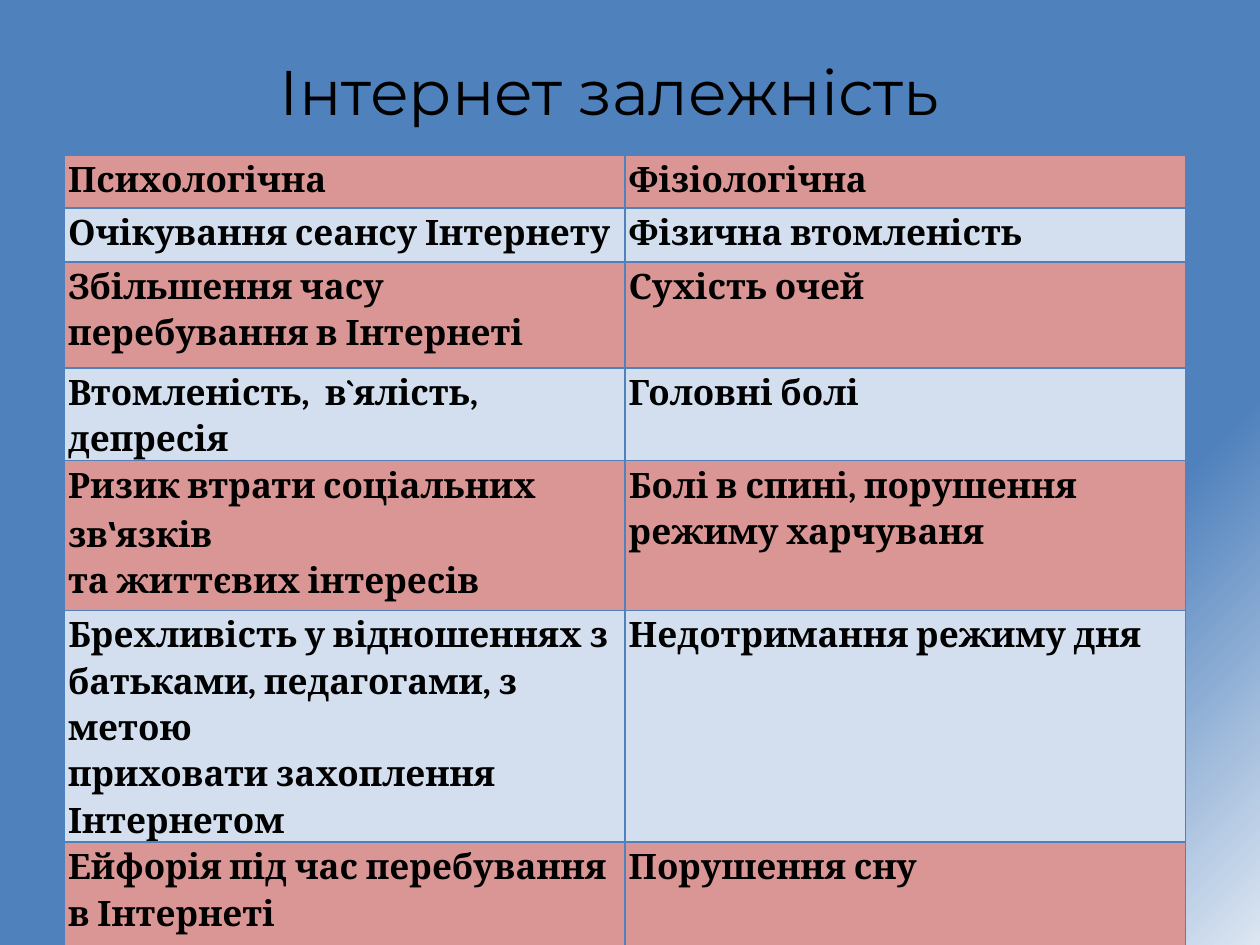
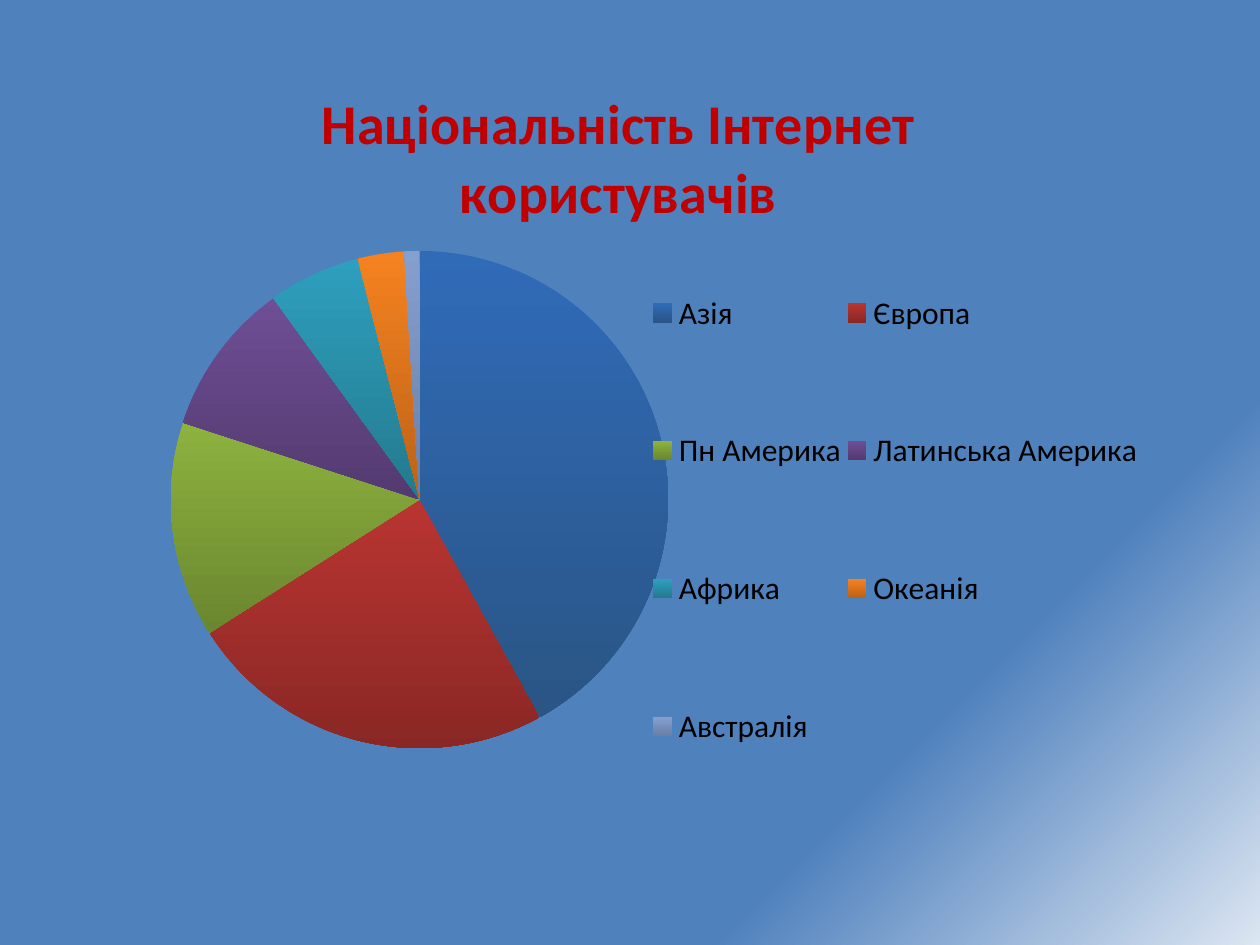
from dataclasses import dataclass

from lxml import etree
from pptx import Presentation
from pptx.chart.data import CategoryChartData
from pptx.dml.color import RGBColor
from pptx.enum.chart import XL_CHART_TYPE, XL_LEGEND_POSITION
from pptx.enum.text import PP_ALIGN
from pptx.oxml import parse_xml
from pptx.oxml.ns import nsdecls, qn
from pptx.util import Pt

PIE = XL_CHART_TYPE.PIE
RIGHT = XL_LEGEND_POSITION.RIGHT
CENTER = PP_ALIGN.CENTER
PX = 9144  # EMU per px, 100 px to the inch


@dataclass(frozen=True)
class Theme:
    blue: str = "4F81BD"
    pale: str = "DCE6F2"
    rose: str = "D99694"
    ice: str = "D3DFEE"
    black: str = "000000"
    red: str = "C00000"
    head: str = "Montserrat"
    serif: str = "Cambria"
    sans: str = "Calibri"
    big: int = 36
    title: int = 32
    cell: int = 20
    label: int = 18
    thin: float = 1
    thick: float = 1.5


T = Theme()

# Each cell is a list of paragraphs
ROWS = [
    (42, ["Психологічна"], ["Фізіологічна"]),
    (43, ["Очікування сеансу Інтернету"], ["Фізична втомленість"]),
    (84, ["Збільшення часу перебування в Інтернеті"], ["Сухість очей"]),
    (42, ["Втомленість,  в`ялість,  депресія"], ["Головні болі"]),
    (119, ["Ризик втрати соціальних зв‛язків", "та життєвих інтересів"],
     ["Болі в спині, порушення режиму харчуваня"]),
    (159, ["Брехливість у відношеннях з", "батьками, педагогами, з метою",
           "приховати захоплення Інтернетом"], ["Недотримання режиму дня"]),
    (85, ["Ейфорія під час перебування в Інтернеті"], ["Порушення сну"]),
]

# Region, share, top and bottom colour of its slice
SHARES = [
    ("Азія", 42, "306BB8", "2A5585"),
    ("Європа", 24, "B93532", "8A2724"),
    ("Пн Америка", 14, "8DB23F", "6A862F"),
    ("Латинська Америка", 10, "6F4E95", "533A70"),
    ("Африка", 6, "2E9FBE", "247A8E"),
    ("Океанія", 3, "F58220", "BC6217"),
    ("Австралія", 1, "859FCF", "6A7FA6"),
]


def scale(*box):
    return [n * PX for n in box]


def style(font, name, size, color, bold=False):
    font.name, font.size, font.bold = name, Pt(size), bold
    font.color.rgb = RGBColor.from_string(color)


def blend(fill, stops, angle):
    """Two-stop gradient; the angle runs counter-clockwise."""
    fill.gradient()
    fill.gradient_angle = angle
    for stop, (pos, color) in zip(fill.gradient_stops, stops):
        stop.position = pos
        stop.color.rgb = RGBColor.from_string(color)


def line(tag, width, color):
    return parse_xml(
        f'<a:{tag} {nsdecls("a")} w="{int(Pt(width))}"><a:solidFill>'
        f'<a:srgbClr val="{color}"/></a:solidFill></a:{tag}>')


def new_slide(deck):
    slide = deck.slides.add_slide(deck.slide_layouts[6])
    blend(slide.background.fill, [(0.75, T.blue), (1, T.pale)], 315)
    return slide


def add_title(slide, box, text):
    frame = slide.shapes.add_textbox(*scale(*box)).text_frame
    frame.word_wrap = False
    para = frame.paragraphs[0]
    para.text, para.alignment = text, CENTER
    style(para.font, T.head, T.big, T.black)
    para.font._element.insert(0, line("ln", 0.75, T.black))


def fill_cell(cell, texts, color, top, base):
    cell.margin_left = cell.margin_right = 3 * PX
    cell.margin_top = cell.margin_bottom = 0
    cell.fill.solid()
    cell.fill.fore_color.rgb = RGBColor.from_string(color)
    frame = cell.text_frame
    for i, text in enumerate(texts):
        para = frame.add_paragraph() if i else frame.paragraphs[0]
        para.line_spacing = 1.15
        # The quote mark has a face of its own
        before, mark, after = text.partition("‛")
        if mark:
            for part, face in ((before, T.serif), (mark, T.head), (after, T.serif)):
                run = para.add_run()
                run.text = part
                style(run.font, face, T.cell, T.black, True)
        else:
            para.text = text
            style(para.font, T.serif, T.cell, T.black, True)
    # Cell borders
    props = cell._tc.get_or_add_tcPr()
    sides = (("lnL", T.thin), ("lnR", T.thin), ("lnT", top), ("lnB", base))
    for i, (tag, width) in enumerate(sides):
        props.insert(i, line(tag, width, T.blue))


def add_grid(slide, box):
    grid = slide.shapes.add_table(len(ROWS), 2, *scale(*box)).table
    grid.first_row = grid.horz_banding = False
    for i, (height, *cells) in enumerate(ROWS):
        grid.rows[i].height = height * PX
        for j, texts in enumerate(cells):
            fill_cell(grid.cell(i, j), texts, T.ice if i % 2 else T.rose,
                      T.thick if i == 1 else T.thin,
                      T.thick if i == 0 else T.thin)


def place(node, index, inner=False, **spots):
    """Give a chart part a fixed place, as shares of the chart."""
    for old in node.findall(qn("c:layout")):
        node.remove(old)
    layout = etree.Element(qn("c:layout"))
    manual = etree.SubElement(layout, qn("c:manualLayout"))
    if inner:
        etree.SubElement(manual, qn("c:layoutTarget"), val="inner")
    for key in "xy":
        etree.SubElement(manual, qn(f"c:{key}Mode"), val="edge")
    for key, spot in spots.items():
        etree.SubElement(manual, qn(f"c:{key}"), val=str(spot))
    node.insert(index, layout)


def add_pie(slide, box, title):
    data = CategoryChartData()
    data.categories = [share[0] for share in SHARES]
    data.add_series(title, [share[1] for share in SHARES])
    chart = slide.shapes.add_chart(PIE, *scale(*box), data).chart
    style(chart.font, T.sans, T.label, T.black)

    # Title
    chart.has_title = True
    para = chart.chart_title.text_frame.paragraphs[0]
    para.text = title
    style(para.font, T.sans, T.title, T.red, True)
    place(chart.chart_title._element, 1, x=0.21, y=0.01)

    # Slices
    plot = chart.plots[0]
    plot.vary_by_categories = True
    for i, (_, _, top, base) in enumerate(SHARES):
        blend(plot.series[0].points[i].format.fill, [(0, top), (1, base)], 270)
    place(plot._element.getparent(), 0, True, x=0.08, y=0.23, w=0.46, h=0.62)

    # Legend
    chart.has_legend = True
    chart.legend.position = RIGHT
    chart.legend.include_in_layout = False
    style(chart.legend.font, T.sans, T.label, T.black)
    place(chart.legend._element, 1, x=0.52, y=0.16, w=0.46, h=0.81)


def main():
    deck = Presentation()
    deck.slide_width, deck.slide_height = scale(1000, 750)

    slide = new_slide(deck)
    add_grid(slide, (51, 123, 890, 574))
    add_title(slide, (137, 37, 693, 126), "Інтернет залежність")

    slide = new_slide(deck)
    add_pie(slide, (67, 52, 858, 638), "Національність Інтернет користувачів")

    deck.save("out.pptx")


if __name__ == "__main__":
    main()
